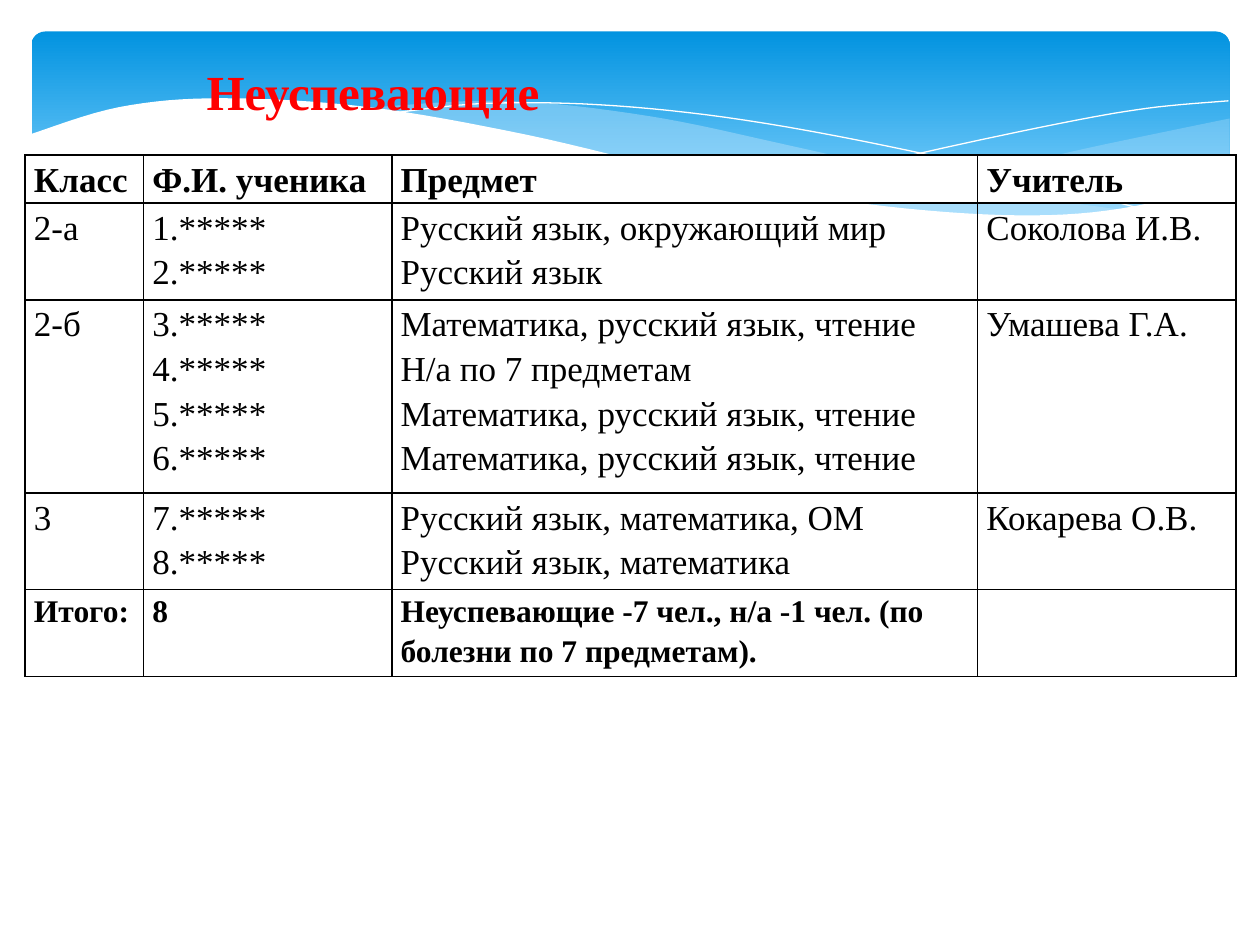
from dataclasses import dataclass

from lxml.etree import SubElement
from pptx import Presentation
from pptx.dml.color import RGBColor
from pptx.enum.shapes import MSO_SHAPE
from pptx.enum.text import MSO_ANCHOR, MSO_AUTO_SIZE, PP_ALIGN
from pptx.oxml.ns import qn
from pptx.util import Inches, Pt


@dataclass(frozen=True)
class Theme:
    """Colours, font and type sizes of the slide."""

    font: str = "Times New Roman"
    title_size: int = 28
    body_size: int = 20
    total_size: int = 18
    line_spacing: float = 1.15
    row_spacing: float = 1.38
    title: str = "FF0000"
    text: str = "000000"
    border: str = "000000"
    paper: str = "FFFFFF"
    ribbon: str = "C6E7FC"
    banner_top: str = "0293E0"
    banner_bottom: str = "83D3FE"


COLUMN_WIDTHS = [0.94, 1.97, 4.65, 2.05]
LINES_PER_ROW = [1, 2, 4, 2, 2]
CURVE_STEPS = 8
MATH_RUSSIAN_READING = "Математика, русский язык, чтение"


def smooth_curve(*knots):
    """Return points on a Catmull-Rom curve that passes through the knots."""
    padded = [knots[0], *knots, knots[-1]]
    points = [knots[0]]
    for before, start, end, after in zip(padded, padded[1:], padded[2:], padded[3:]):
        for step in range(1, CURVE_STEPS + 1):
            t = step / CURVE_STEPS
            points.append(tuple(
                (2 * b + (c - a) * t + (2 * a - 5 * b + 4 * c - d) * t ** 2
                 + (3 * b - a - 3 * c + d) * t ** 3) / 2
                for a, b, c, d in zip(before, start, end, after)))
    return points


def numbered_pupils(first, last):
    """Return the masked pupil names from first to last."""
    return [f"{number}.*****" for number in range(first, last + 1)]


REPORT = [
    [["Класс"], ["Ф.И. ученика"], ["Предмет"], ["Учитель"]],
    [["2-а"], numbered_pupils(1, 2),
     ["Русский язык, окружающий мир", "Русский язык"], ["Соколова И.В."]],
    [["2-б"], numbered_pupils(3, 6),
     [MATH_RUSSIAN_READING, "Н/а по 7 предметам", MATH_RUSSIAN_READING, MATH_RUSSIAN_READING],
     ["Умашева Г.А."]],
    [["3"], numbered_pupils(7, 8),
     ["Русский язык, математика, ОМ", "Русский язык, математика"], ["Кокарева О.В."]],
    [["Итого:"], ["8"],
     ["Неуспевающие -7 чел., н/а -1 чел. (по болезни по 7 предметам)."], []],
]


class SlideBuilder:
    """Draws themed elements on the current slide."""

    def __init__(self, slide, theme):
        """Keep the slide and its theme."""
        self.slide = slide
        self.theme = theme

    def run(self, paragraph, wording, size, color, bold):
        """Add one formatted run to a paragraph."""
        run = paragraph.add_run()
        run.text = wording
        run.font.name = self.theme.font
        run.font.size = Pt(size)
        run.font.bold = bold
        run.font.color.rgb = RGBColor.from_string(color)

    def banner(self, left, top, width, height):
        """Draw the rounded gradient banner."""
        banner = self.slide.shapes.add_shape(
            MSO_SHAPE.ROUNDED_RECTANGLE, Inches(left), Inches(top), Inches(width), Inches(height))
        banner.adjustments[0] = 0.07
        banner.shadow.inherit = False
        banner.line.fill.background()
        banner.fill.gradient()
        banner.fill.gradient_angle = 270
        stops = [(0, self.theme.banner_top), (0.9, self.theme.banner_bottom)]
        for stop, (position, color) in zip(banner.fill.gradient_stops, stops):
            stop.position = position
            stop.color.rgb = RGBColor.from_string(color)

    def outline(self, points, closed):
        """Build a freeform through points given in inches."""
        start, *rest = [(Inches(x), Inches(y)) for x, y in points]
        builder = self.slide.shapes.build_freeform(*start)
        builder.add_line_segments(rest, close=closed)
        outline = builder.convert_to_shape()
        outline.shadow.inherit = False
        return outline

    def wave(self, points, color, opacity=100):
        """Draw a filled wave with the given opacity in percent."""
        wave = self.outline(points, closed=True)
        wave.line.fill.background()
        wave.fill.solid()
        wave.fill.fore_color.rgb = RGBColor.from_string(color)
        if opacity < 100:
            tint = wave.element.spPr.find(f"{qn('a:solidFill')}/{qn('a:srgbClr')}")
            SubElement(tint, qn("a:alpha"), val=str(opacity * 1000))

    def crest(self, points):
        """Draw a hairline along a wave crest."""
        crest = self.outline(points, closed=False)
        crest.fill.background()
        crest.line.color.rgb = RGBColor.from_string(self.theme.paper)
        crest.line.width = Pt(0)

    def wavy_banner(self):
        """Draw the banner with its ribbons, crests and white lower edge."""
        self.banner(0.25, 0.25, 9.51, 1.56)
        right_top = smooth_curve((9.76, 0.94), (8.61, 1.18), (7.53, 1.43), (6.61, 1.6))
        right_bottom = smooth_curve(
            (6.61, 1.6), (7.45, 1.69), (8.24, 1.72), (9.05, 1.63), (9.76, 1.41))
        left_top = smooth_curve(
            (8.93, 1.67), (7.75, 1.49), (6.29, 1.16), (5.14, 0.92), (3.99, 0.8), (2.86, 0.86))
        left_bottom = smooth_curve(
            (2.86, 0.86), (4.04, 1.06), (5.3, 1.35), (6.65, 1.61), (7.85, 1.72), (8.93, 1.67))
        self.wave(right_top + right_bottom, self.theme.ribbon, 29)
        self.wave(left_top + left_bottom, self.theme.ribbon, 40)
        self.crest(smooth_curve(
            (3.09, 0.9), (3.87, 0.82), (4.89, 0.84), (6.08, 0.98), (7.6, 1.28), (9.07, 1.66)))
        self.crest(smooth_curve(
            (6.13, 1.51), (7.2, 1.24), (8.36, 0.99), (9.1, 0.86), (9.75, 0.8)))
        white_edge = smooth_curve(
            (9.77, 1.41), (8.99, 1.64), (8.09, 1.71), (6.88, 1.62), (5.55, 1.39),
            (4.18, 1.07), (2.92, 0.85), (1.77, 0.78), (0.95, 0.85), (0.23, 1.07))
        self.wave(white_edge + [(0.23, 2.24), (9.77, 2.24)], self.theme.paper)

    def title(self, wording, left, top, width, height):
        """Place the title in front of the banner."""
        title = self.slide.shapes.title
        title.left, title.top = Inches(left), Inches(top)
        title.width, title.height = Inches(width), Inches(height)
        title.element.getparent().append(title.element)
        frame = title.text_frame
        frame.word_wrap = False
        frame.auto_size = MSO_AUTO_SIZE.SHAPE_TO_FIT_TEXT
        frame.vertical_anchor = MSO_ANCHOR.TOP
        frame.paragraphs[0].alignment = PP_ALIGN.LEFT
        self.run(frame.paragraphs[0], wording, self.theme.title_size, self.theme.title, True)

    def borders(self, table_frame):
        """Rule every side of every cell in the table."""
        for cell_element in table_frame.element.iter(qn("a:tc")):
            properties = cell_element.get_or_add_tcPr()
            for side in ("L", "R", "T", "B"):
                border = SubElement(properties, qn(f"a:ln{side}"), w=str(Pt(1)))
                paint = SubElement(border, qn("a:solidFill"))
                SubElement(paint, qn("a:srgbClr"), val=self.theme.border)

    def cell(self, cell, lines, size, bold, filled):
        """Format one table cell and write its lines."""
        cell.margin_left = cell.margin_right = Inches(0.07)
        cell.margin_top = cell.margin_bottom = 0
        if filled:
            cell.fill.solid()
            cell.fill.fore_color.rgb = RGBColor.from_string(self.theme.paper)
        else:
            cell.fill.background()
        frame = cell.text_frame
        for index, line in enumerate(lines):
            paragraph = frame.add_paragraph() if index else frame.paragraphs[0]
            paragraph.line_spacing = self.theme.line_spacing
            self.run(paragraph, line, size, self.theme.text, bold)

    def table(self, rows, left, top, widths, line_counts):
        """Draw the table with a bold header and a bold total row."""
        theme = self.theme
        sizes = [theme.body_size] * (len(rows) - 1) + [theme.total_size]
        heights = [Pt(size * theme.row_spacing * count)
                   for size, count in zip(sizes, line_counts)]
        table_frame = self.slide.shapes.add_table(
            len(rows), len(widths), Inches(left), Inches(top), Inches(sum(widths)), sum(heights))
        self.borders(table_frame)
        table = table_frame.table
        table.first_row = table.horz_banding = False
        for column, width in zip(table.columns, widths):
            column.width = Inches(width)
        for index, (row, contents) in enumerate(zip(table.rows, rows)):
            row.height = heights[index]
            header, total = index == 0, index == len(rows) - 1
            for cell, lines in zip(row.cells, contents):
                self.cell(cell, lines, sizes[index], header or total, header)


def main():
    """Build and save the report slide."""
    presentation = Presentation()
    presentation.slide_width, presentation.slide_height = Inches(10), Inches(7.5)
    title_only = presentation.slide_layouts[5]
    builder = SlideBuilder(presentation.slides.add_slide(title_only), Theme())
    builder.wavy_banner()
    builder.table(REPORT, 0.2, 1.23, COLUMN_WIDTHS, LINES_PER_ROW)
    builder.title("Неуспевающие", 1.54, 0.44, 2.87, 0.57)
    presentation.save("out.pptx")


if __name__ == "__main__":
    main()
